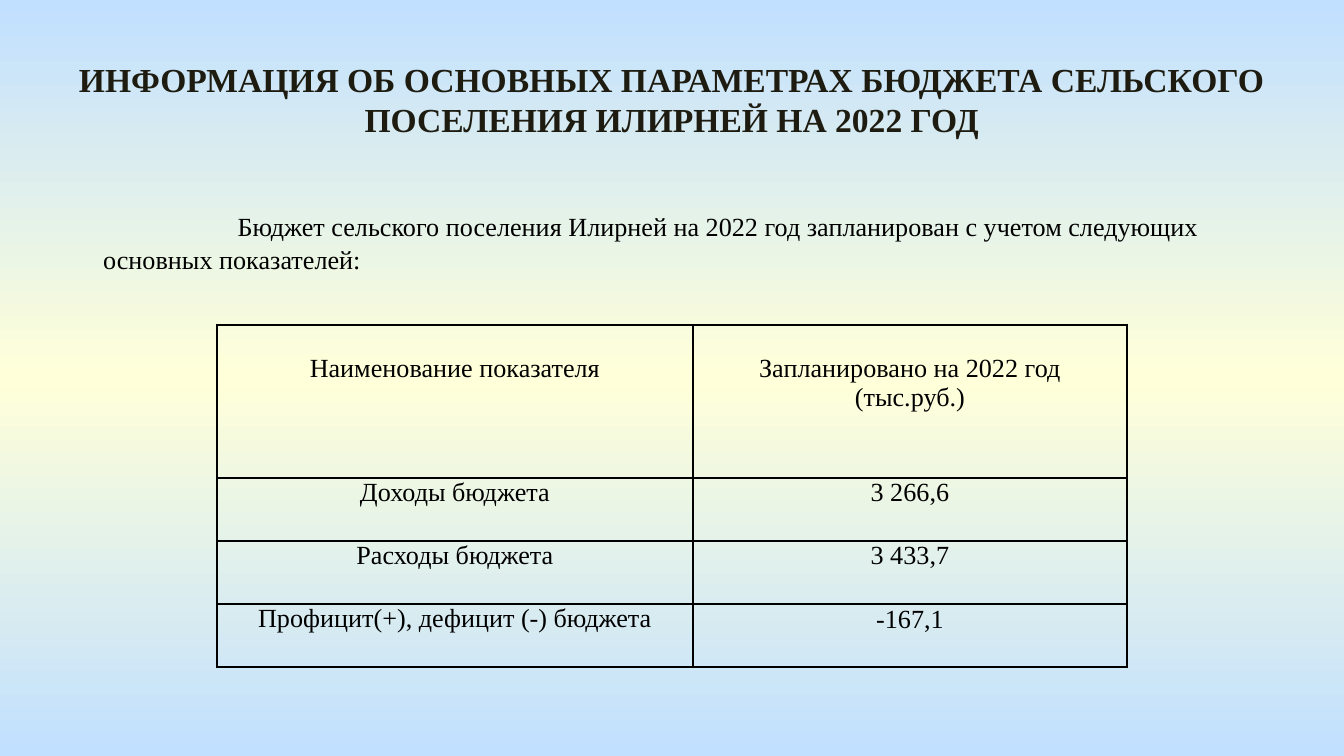
from lxml.etree import SubElement
from pptx import Presentation
from pptx.dml.color import RGBColor
from pptx.enum.shapes import MSO_SHAPE as Shape
from pptx.enum.text import MSO_ANCHOR as Anchor, PP_ALIGN as Align
from pptx.oxml.ns import qn
from pptx.util import Pt

EMU_PER_PX = 914400 / 134.4
FONT = "Times New Roman"
BLACK = RGBColor(0x00, 0x00, 0x00)
TITLE_INK = RGBColor(0x1E, 0x1C, 0x11)
SKY = RGBColor(0xC1, 0xE0, 0xFF)
CREAM = RGBColor(0xFF, 0xFF, 0xD9)

TITLE = "ИНФОРМАЦИЯ ОБ ОСНОВНЫХ ПАРАМЕТРАХ БЮДЖЕТА СЕЛЬСКОГО ПОСЕЛЕНИЯ ИЛИРНЕЙ НА 2022 ГОД"
INTRO = ("Бюджет сельского поселения Илирней на 2022 год запланирован "
         "с учетом следующих основных показателей:")
BUDGET_ROWS = [
    ("Наименование показателя", "Запланировано на 2022 год (тыс.руб.)"),
    ("Доходы бюджета", "3 266,6"),
    ("Расходы бюджета", "3 433,7"),
    ("Профицит(+), дефицит (-) бюджета", "-167,1"),
]
COLUMN_WIDTHS = (476, 434)
ROW_HEIGHTS = (153, 63, 63, 63)
HEADER_GAP = 29


def px(length):
    return round(length * EMU_PER_PX)


def paint_background(page, colors):
    """Vertical gradient with evenly spaced stops."""
    fill = page.background.fill
    fill.gradient()
    fill.gradient_angle = 270
    stops = fill._fill._gradFill.find(qn("a:gsLst"))
    for stop in list(stops):
        stops.remove(stop)
    for index, color in enumerate(colors):
        position = index * 100000 // (len(colors) - 1)
        stop = SubElement(stops, qn("a:gs"), pos=str(position))
        SubElement(stop, qn("a:srgbClr"), val=str(color))


def style_paragraph(para, size, color, align, bold=False):
    para.alignment = align
    font = para.font
    font.name, font.size, font.bold = FONT, Pt(size), bold
    font.color.rgb = color


def add_title(page, left, top, width, height):
    box = page.shapes.add_textbox(px(left), px(top), px(width), px(height))
    box.text_frame.word_wrap = True
    box.text_frame.text = TITLE
    style_paragraph(box.text_frame.paragraphs[0], 18, TITLE_INK, Align.CENTER, bold=True)


def add_intro(page, left, top, width, height):
    """Rectangle filled with the slide background, first line indented."""
    panel = page.shapes.add_shape(
        Shape.RECTANGLE, px(left), px(top), px(width), px(height))
    panel.shadow.inherit = False
    panel.line.fill.background()
    element = panel._element
    element.set("useBgFill", "1")
    element.remove(element.find(qn("p:style")))

    frame = panel.text_frame
    frame.word_wrap = True
    frame.vertical_anchor = Anchor.TOP
    frame.margin_top = px(13)
    frame.text = INTRO
    para = frame.paragraphs[0]
    style_paragraph(para, 14, BLACK, Align.LEFT)
    para.line_spacing = Pt(17.7)
    para._p.get_or_add_pPr().set("indent", str(px(134.4)))


def outline_cell(cell):
    properties = cell._tc.get_or_add_tcPr()
    for index, side in enumerate(("a:lnL", "a:lnR", "a:lnT", "a:lnB")):
        line = properties.makeelement(qn(side), {"w": str(Pt(1))})
        fill = SubElement(line, qn("a:solidFill"))
        SubElement(fill, qn("a:srgbClr"), val=str(BLACK))
        properties.insert(index, line)


def add_budget_table(page, left, top):
    table = page.shapes.add_table(
        len(BUDGET_ROWS), len(COLUMN_WIDTHS), px(left), px(top),
        px(sum(COLUMN_WIDTHS)), px(sum(ROW_HEIGHTS))).table
    table.first_row = table.horz_banding = False
    for column, width in zip(table.columns, COLUMN_WIDTHS):
        column.width = px(width)
    for row_index, (row, height) in enumerate(zip(table.rows, ROW_HEIGHTS)):
        row.height = px(height)
        for cell, text in zip(row.cells, BUDGET_ROWS[row_index]):
            cell.text = text
            cell.fill.background()
            cell.margin_left = cell.margin_right = px(9)
            cell.margin_top = px(HEADER_GAP if row_index == 0 else 0)
            cell.margin_bottom = 0
            style_paragraph(cell.text_frame.paragraphs[0], 14, BLACK, Align.CENTER)
            outline_cell(cell)
    # The balance figure sits slightly lower
    balance = table.cell(len(BUDGET_ROWS) - 1, 1)
    balance.margin_left = balance.margin_right = balance.margin_top = px(1)


def main():
    deck = Presentation()
    deck.slide_width, deck.slide_height = px(1344), px(756)
    page = deck.slides.add_slide(deck.slide_layouts[6])
    paint_background(page, (SKY, CREAM, SKY))

    add_intro(page, 90, 196, 1175, 86)
    add_title(page, 47, 52, 1250, 95)
    add_budget_table(page, 217, 325)
    deck.save("out.pptx")


if __name__ == "__main__":
    main()
